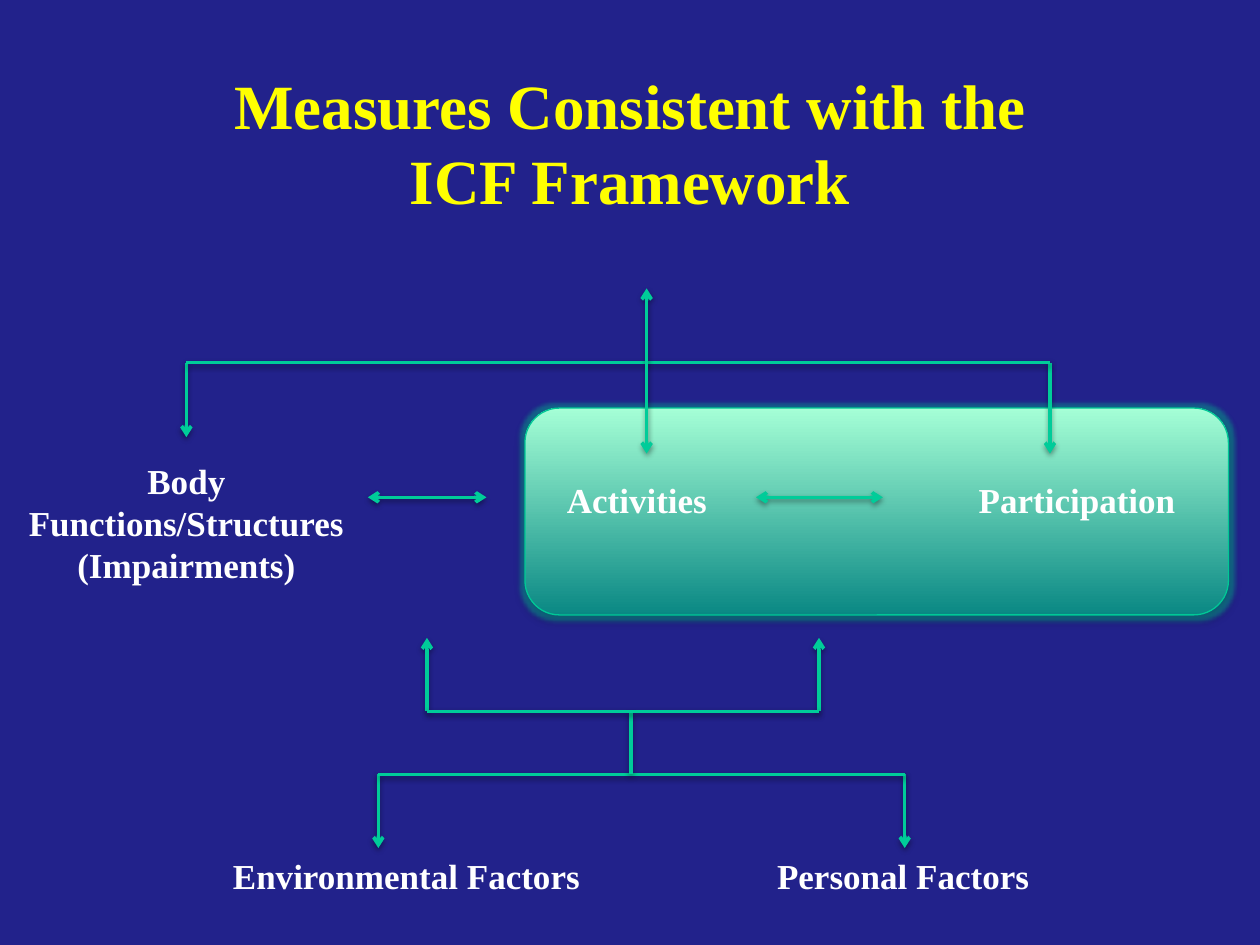
from lxml import etree
from pptx import Presentation
from pptx.dml.color import RGBColor
from pptx.enum import shapes, text
from pptx.oxml import ns
from pptx.util import Pt

COLORS = {
    "background": "22228B",
    "title": "FFFF00",
    "label": "FFFFFF",
    "arrow": "00CC99",
    "panel_top": "A5FFD6",
    "panel_bottom": "0A8884",
    "panel_edge": "00C896",
    "shadow": "000000",
}
FONT = "Times New Roman"


def color(name):
    return RGBColor.from_string(COLORS[name])


def add_effects(item, opacity, distance, glow=0):
    effects = etree.SubElement(item._element.spPr, ns.qn("a:effectLst"))
    layers = [("a:outerShdw", "shadow", opacity,
               {"blurRad": Pt(3.1), "dist": Pt(distance), "dir": 5400000, "rotWithShape": 0})]
    if glow:
        layers.insert(0, ("a:glow", "panel_edge", 40, {"rad": Pt(glow)}))
    for tag, tint, percent, settings in layers:
        layer = etree.SubElement(effects, ns.qn(tag))
        for key, value in settings.items():
            layer.set(key, str(int(value)))
        shade = etree.SubElement(layer, ns.qn("a:srgbClr"), val=COLORS[tint])
        etree.SubElement(shade, ns.qn("a:alpha"), val=str(percent * 1000))


def style(paragraph, size, tint, alignment):
    paragraph.alignment = alignment
    paragraph.font.name = FONT
    paragraph.font.size = Pt(size)
    paragraph.font.bold = True
    paragraph.font.color.rgb = color(tint)


prs = Presentation()
prs.slide_width, prs.slide_height = Pt(720), Pt(540)
slide = prs.slides.add_slide(prs.slide_layouts[5])
slide.background.fill.solid()
slide.background.fill.fore_color.rgb = color("background")

title = slide.shapes.title
title.left, title.top, title.width, title.height = Pt(54), Pt(36), Pt(612), Pt(90)
title.text_frame.text = "Measures Consistent with the\vICF Framework"
title.text_frame.vertical_anchor = text.MSO_ANCHOR.MIDDLE
style(title.text_frame.paragraphs[0], 36, "title", text.PP_ALIGN.CENTER)

panel = slide.shapes.add_shape(
    shapes.MSO_SHAPE.ROUNDED_RECTANGLE, Pt(300), Pt(233.2), Pt(402), Pt(118.2))
panel.fill.gradient()
panel.fill.gradient_angle = 90
for stop, position, tint in zip(
        panel.fill.gradient_stops, (0, 1), ("panel_bottom", "panel_top")):
    stop.position = position
    stop.color.rgb = color(tint)
panel.line.color.rgb = color("panel_edge")
panel.line.width = Pt(0.75)
add_effects(panel, 35, 1.8, glow=5)

labels = [
    ("Body\vFunctions/Structures\n(Impairments)", 8.6, 259.2, 195.8, 80, text.PP_ALIGN.CENTER),
    ("Activities", 316.8, 270, 95, 31.5, text.PP_ALIGN.LEFT),
    ("Participation", 552.2, 270, 127.4, 31.5, text.PP_ALIGN.LEFT),
    ("Environmental Factors", 126, 484.6, 214.6, 31.5, text.PP_ALIGN.LEFT),
    ("Personal Factors", 437, 484.6, 160, 31.5, text.PP_ALIGN.LEFT),
]
for wording, left, top, width, height, alignment in labels:
    label = slide.shapes.add_textbox(Pt(left), Pt(top), Pt(width), Pt(height))
    label.text_frame.word_wrap = False
    label.text_frame.auto_size = text.MSO_AUTO_SIZE.SHAPE_TO_FIT_TEXT
    label.text_frame.text = wording
    for paragraph in label.text_frame.paragraphs:
        style(paragraph, 20, "label", alignment)

body_x, activities_x, participation_x = 106.5, 369.5, 600
environment_x, personal_x = 216.2, 517
left_riser_x, right_riser_x, stem_x = 244, 468, 360.5
upper_y, middle_y, riser_y, factors_y = 207.2, 284.2, 406.5, 442.5
START, END = "a:headEnd", "a:tailEnd"
links = [
    (environment_x, factors_y, environment_x, 484.6, [END]),
    (personal_x, factors_y, personal_x, 484.6, [END]),
    (environment_x, factors_y, personal_x, factors_y, []),
    (210.2, middle_y, 278, middle_y, [START, END]),
    (432, middle_y, 504.5, middle_y, [START, END]),
    (body_x, upper_y, body_x, 249.8, [END]),
    (participation_x, upper_y, participation_x, 259.2, [END]),
    (body_x, upper_y, participation_x, upper_y, []),
    (stem_x, riser_y, stem_x, factors_y, []),
    (left_riser_x, riser_y, left_riser_x, 364.5, [END]),
    (right_riser_x, riser_y, right_riser_x, 364.5, [END]),
    (left_riser_x, riser_y, right_riser_x, riser_y, []),
    (activities_x, 164.8, activities_x, 259.2, [START, END]),
]
for x1, y1, x2, y2, arrowheads in links:
    link = slide.shapes.add_connector(
        shapes.MSO_CONNECTOR.STRAIGHT, Pt(x1), Pt(y1), Pt(x2), Pt(y2))
    link.line.color.rgb = color("arrow")
    link.line.width = Pt(2)
    for arrowhead in arrowheads:
        etree.SubElement(link.line._get_or_add_ln(), ns.qn(arrowhead), type="arrow")
    add_effects(link, 38, 1.6)

prs.save("out.pptx")
